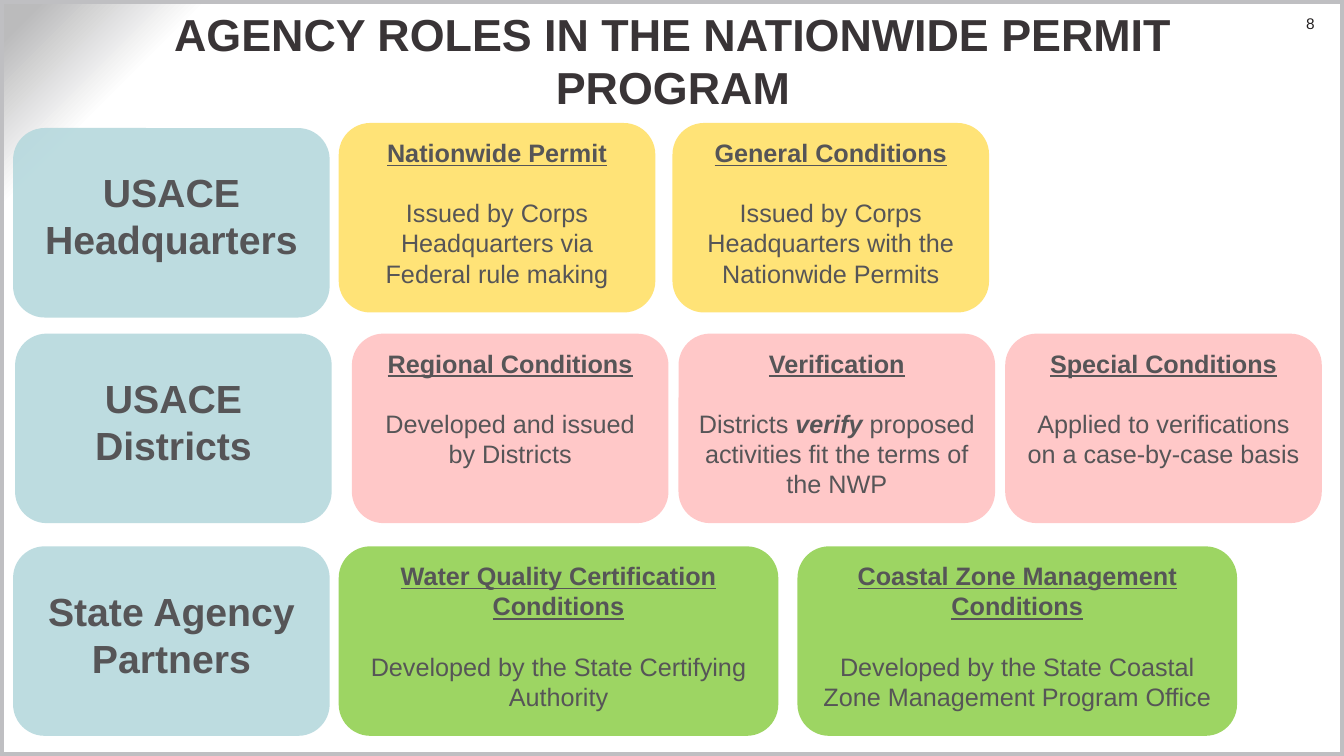
from lxml import etree
from pptx import Presentation
from pptx.dml.color import RGBColor
from pptx.enum.shapes import MSO_SHAPE
from pptx.enum.text import MSO_ANCHOR, PP_ALIGN
from pptx.oxml import parse_xml
from pptx.oxml.ns import nsdecls, qn
from pptx.util import Inches, Pt

RECT, ROUNDED = MSO_SHAPE.RECTANGLE, MSO_SHAPE.ROUNDED_RECTANGLE
TOP, MIDDLE = MSO_ANCHOR.TOP, MSO_ANCHOR.MIDDLE
CENTER, RIGHT = PP_ALIGN.CENTER, PP_ALIGN.RIGHT

FONT = "Arial"
COLORS = {
    "title": "393436", "text": "565557", "number": "221F20", "frame": "BFBFC2",
    "agency": "B5D8DD", "headquarters": "FFE067", "district": "FFC2C2", "state": "92D050",
}
TITLE = "AGENCY ROLES IN THE NATIONWIDE PERMIT PROGRAM"
PAGE_NUMBER = "8"
BACKGROUND_STOPS = [(87, "FFFFFF"), (90, "FFFFFF"), (98, "BBBBBC")]
BOX_HEIGHT = 1.88
AGENCY_WIDTH = 3.14

ROWS = [
    {"agency": "USACE Headquarters", "at": (0.13, 1.27), "color": "headquarters",
     "left": 3.36, "top": 1.22, "width": 3.14, "gap": 0.17, "cards": [
         ("Nationwide Permit", [("Issued by Corps Headquarters via Federal rule making", False)]),
         ("General Conditions", [("Issued by Corps Headquarters with the Nationwide Permits", False)]),
     ]},
    {"agency": "USACE Districts", "at": (0.15, 3.31), "color": "district",
     "left": 3.49, "top": 3.31, "width": 3.14, "gap": 0.1, "cards": [
         ("Regional Conditions", [("Developed and issued by Districts", False)]),
         ("Verification", [("Districts ", False), ("verify", True),
                           (" proposed activities fit the terms of the NWP", False)]),
         ("Special Conditions", [("Applied to verifications on a case-by-case basis", False)]),
     ]},
    {"agency": "State Agency Partners", "at": (0.13, 5.42), "color": "state",
     "left": 3.36, "top": 5.42, "width": 4.36, "gap": 0.19, "cards": [
         ("Water Quality Certification Conditions",
          [("Developed by the State Certifying Authority", False)]),
         ("Coastal Zone Management Conditions",
          [("Developed by the State Coastal Zone Management Program Office", False)]),
     ]},
]


def rgb(name):
    return RGBColor.from_string(COLORS[name])


def set_background(slide):
    stops = "".join(f'<a:gs pos="{pos * 1000}"><a:srgbClr val="{color}"/></a:gs>'
                    for pos, color in BACKGROUND_STOPS)
    bg = parse_xml(
        f'<p:bg {nsdecls("p", "a")}><p:bgPr><a:gradFill rotWithShape="1">'
        f'<a:gsLst>{stops}</a:gsLst><a:path path="circle">'
        '<a:fillToRect l="100000" t="100000"/></a:path></a:gradFill>'
        '<a:effectLst/></p:bgPr></p:bg>')
    slide.element.cSld.insert(0, bg)


def add_run(p, text, size, color, bold=False, italic=False, underline=False):
    r = p.add_run()
    r.text = text
    font = r.font
    font.name, font.size = FONT, Pt(size)
    font.bold, font.italic, font.underline = bold, italic, underline
    font.color.rgb = rgb(color)


def set_frame(tf, anchor, insets):
    tf.word_wrap = True
    tf.vertical_anchor = anchor
    tf.margin_left, tf.margin_top, tf.margin_right, tf.margin_bottom = map(Inches, insets)


def add_text(slide, box, text, size, color, align, insets, bold=False):
    tf = slide.shapes.add_textbox(*map(Inches, box)).text_frame
    set_frame(tf, MIDDLE, insets)
    p = tf.paragraphs[0]
    p.alignment = align
    add_run(p, text, size, color, bold)


def add_box(slide, left, top, width, color, top_inset=0.05):
    sp = slide.shapes.add_shape(ROUNDED, *map(Inches, (left, top, width, BOX_HEIGHT)))
    sp.shadow.inherit = False
    sp.line.fill.background()
    sp.fill.solid()
    sp.fill.fore_color.rgb = rgb(color)
    fill_color = sp.fill._xPr.find(".//" + qn("a:srgbClr"))
    etree.SubElement(fill_color, qn("a:alpha"), val="89000")
    set_frame(sp.text_frame, TOP, (0.1, top_inset, 0.1, 0.05))
    p = sp.text_frame.paragraphs[0]
    p.alignment = CENTER
    return sp.text_frame, p


def add_card(slide, left, top, width, color, heading, body):
    tf, p = add_box(slide, left, top, width, color)
    add_run(p, heading, 18, "text", bold=True, underline=True)
    p = tf.add_paragraph()
    p.alignment = CENTER
    p.space_before = Pt(21.5)
    for text, strong in body:
        add_run(p, text, 18, "text", bold=strong, italic=strong)


def main():
    prs = Presentation()
    prs.slide_width, prs.slide_height = Inches(13.33), Inches(7.5)
    s = prs.slides.add_slide(prs.slide_layouts[6])
    set_background(s)

    frame = s.shapes.add_shape(RECT, 0, 0, prs.slide_width, prs.slide_height)
    frame.shadow.inherit = False
    frame.fill.background()
    frame.line.color.rgb = rgb("frame")
    frame.line.width = Pt(6)

    add_text(s, (12.44, 0.14, 0.6, 0.19), PAGE_NUMBER, 11, "number", RIGHT, (0.1, 0, 0, 0))
    add_text(s, (1.08, 0.14, 11.19, 0.91), TITLE, 32, "title", CENTER,
             (0.05, 0, 0.05, 0), bold=True)

    for row in ROWS:
        tf, p = add_box(s, *row["at"], AGENCY_WIDTH, "agency", top_inset=0.31)
        add_run(p, row["agency"], 28, "text", bold=True)
        for i, (heading, body) in enumerate(row["cards"]):
            left = row["left"] + i * (row["width"] + row["gap"])
            add_card(s, left, row["top"], row["width"], row["color"], heading, body)

    prs.save("out.pptx")


if __name__ == "__main__":
    main()
